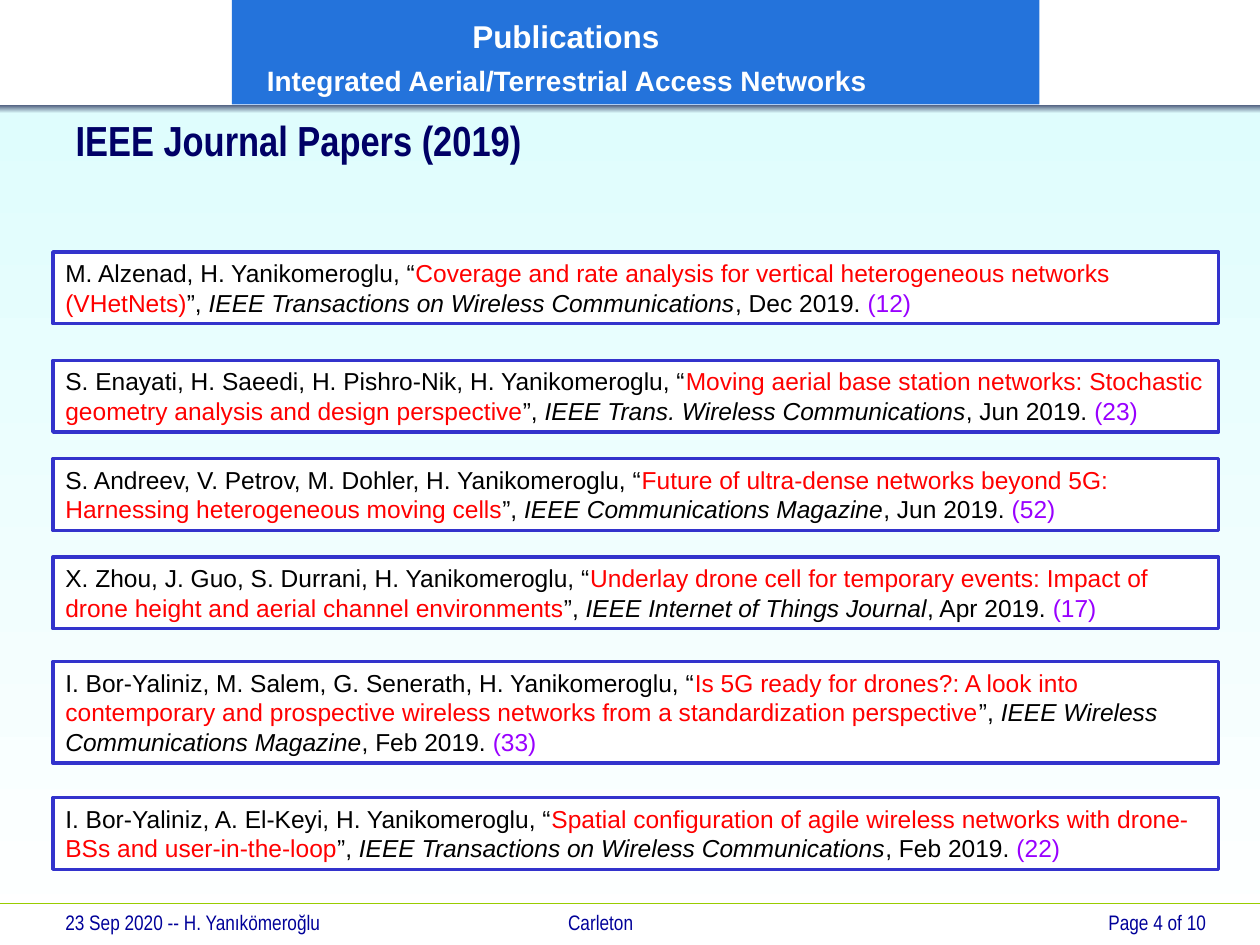
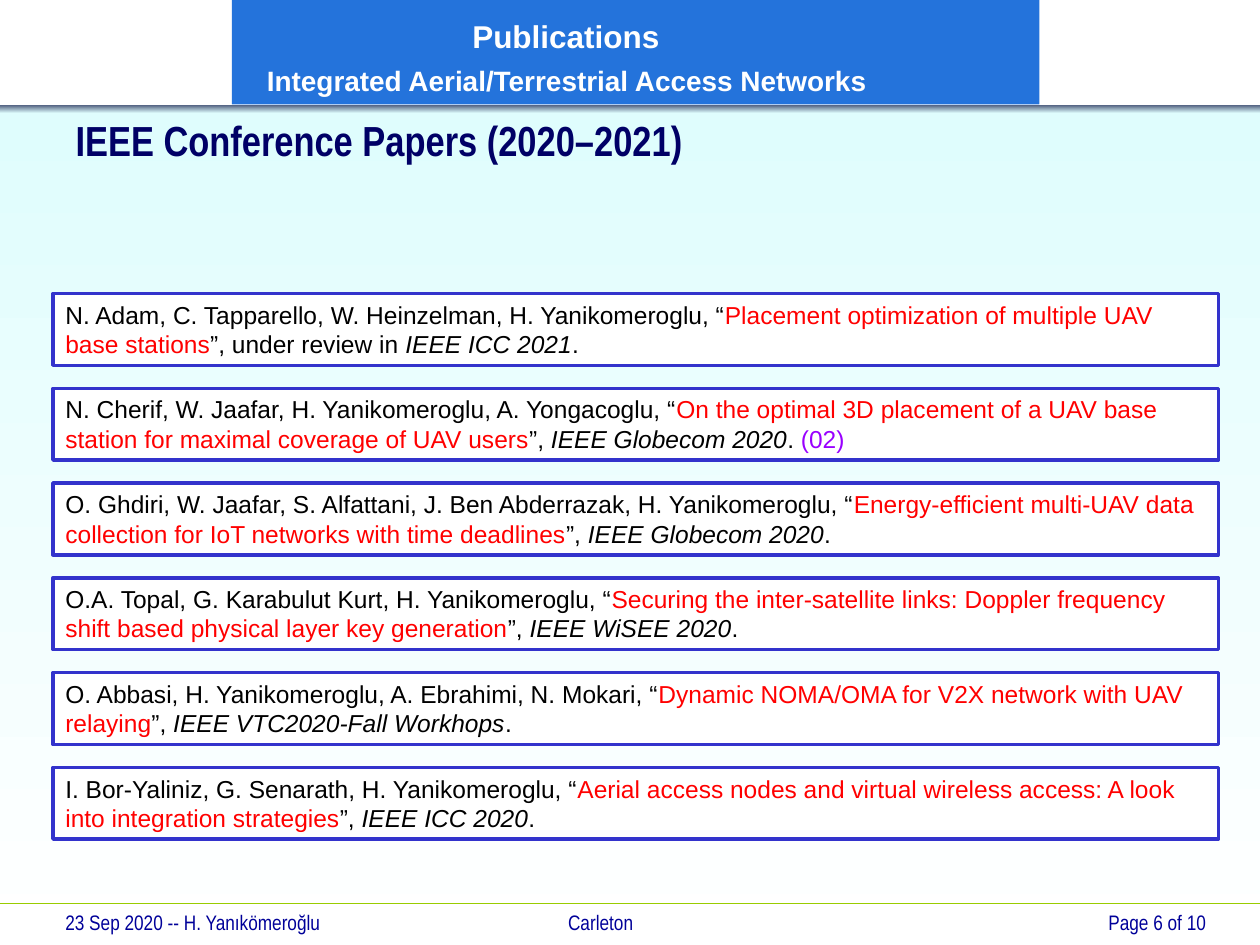
from lxml.etree import SubElement
from pptx import Presentation
from pptx.dml.color import RGBColor
from pptx.enum.shapes import MSO_CONNECTOR as Link, MSO_SHAPE as Shape
from pptx.enum.text import MSO_ANCHOR as Anchor, MSO_AUTO_SIZE as Fit, PP_ALIGN as Align
from pptx.oxml.ns import qn
from pptx.util import Inches, Pt

BLACK = RGBColor(0x00, 0x00, 0x00)
WHITE = RGBColor(0xFF, 0xFF, 0xFF)
RED = RGBColor(0xFF, 0x00, 0x00)
PURPLE = RGBColor(0x99, 0x00, 0xFF)
NAVY = RGBColor(0x00, 0x00, 0x66)
INK = RGBColor(0x00, 0x00, 0x99)
EDGE = RGBColor(0x33, 0x33, 0xCC)
BAND = RGBColor(0x24, 0x73, 0xDB)
SLATE = RGBColor(0x47, 0x55, 0x77)
PALE = RGBColor(0xDF, 0xFD, 0xFD)
LIME = RGBColor(0x99, 0xCC, 0x00)
NARROW = "Arial Narrow"

HEAD = [("Publications", 18, 1.81), ("Integrated Aerial/Terrestrial Access Networks", 16, 0.18)]
FOOT = "23 Sep 2020 -- H. Yanıkömeroğlu\tCarleton"

DECK = [
    dict(
        title="IEEE Journal Papers (2019)", width=6.92, page="Page 4 of 10",
        tops=[2, 2.86, 3.64, 4.42, 5.25, 6.33], lines=[2, 2, 2, 2, 3, 2],
        papers=[
            ("M. Alzenad, H. Yanikomeroglu",
             "Coverage and rate analysis for vertical heterogeneous networks (VHetNets)",
             "", "IEEE Transactions on Wireless Communications", ", Dec 2019. ", "(12)"),
            ("S. Enayati, H. Saeedi, H. Pishro-Nik, H. Yanikomeroglu",
             "Moving aerial base station networks: Stochastic geometry analysis and design perspective",
             "", "IEEE Trans. Wireless Communications", ", Jun 2019. ", "(23)"),
            ("S. Andreev, V. Petrov, M. Dohler, H. Yanikomeroglu",
             "Future of ultra-dense networks beyond 5G: Harnessing heterogeneous moving cells",
             "", "IEEE Communications Magazine", ", Jun 2019. ", "(52)"),
            ("X. Zhou, J. Guo, S. Durrani, H. Yanikomeroglu",
             "Underlay drone cell for temporary events: Impact of drone height and aerial channel environments",
             "", "IEEE Internet of Things Journal", ", Apr 2019. ", "(17)"),
            ("I. Bor-Yaliniz, M. Salem, G. Senerath, H. Yanikomeroglu",
             "Is 5G ready for drones?: A look into contemporary and prospective wireless networks "
             "from a standardization perspective",
             "", "IEEE Wireless Communications Magazine", ", Feb 2019. ", "(33)"),
            ("I. Bor-Yaliniz, A. El-Keyi, H. Yanikomeroglu",
             "Spatial configuration of agile wireless networks with drone-BSs and user-in-the-loop",
             "", "IEEE Transactions on Wireless Communications", ", Feb 2019. ", "(22)"),
        ]),
    dict(
        title="IEEE Conference Papers (2020–2021)", width=8.58, page="Page 6 of 10",
        tops=[2.33 + 3.76 * i / 5 for i in range(6)], lines=[2] * 6,
        papers=[
            ("N. Adam, C. Tapparello, W. Heinzelman, H. Yanikomeroglu",
             "Placement optimization of multiple UAV base stations",
             "under review in ", "IEEE ICC 2021", ".", ""),
            ("N. Cherif, W. Jaafar, H. Yanikomeroglu, A. Yongacoglu",
             "On the optimal 3D placement of a UAV base station for maximal coverage of UAV users",
             "", "IEEE Globecom 2020", ". ", "(02)"),
            ("O. Ghdiri, W. Jaafar, S. Alfattani, J. Ben Abderrazak, H. Yanikomeroglu",
             "Energy-efficient multi-UAV data collection for IoT networks with time deadlines",
             "", "IEEE Globecom 2020", ".", ""),
            ("O.A. Topal, G. Karabulut Kurt, H. Yanikomeroglu",
             "Securing the inter-satellite links: Doppler frequency shift based physical layer key generation",
             "", "IEEE WiSEE 2020", ".", ""),
            ("O. Abbasi, H. Yanikomeroglu, A. Ebrahimi, N. Mokari",
             "Dynamic NOMA/OMA for V2X network with UAV relaying",
             "", "IEEE VTC2020-Fall Workhops", ".", ""),
            ("I. Bor-Yaliniz, G. Senarath, H. Yanikomeroglu",
             "Aerial access nodes and virtual wireless access: A look into integration strategies",
             "", "IEEE ICC 2020", ".", ""),
        ]),
]


def put(para, text, size=14, color=BLACK, font="Arial", bold=False, italic=False, align=Align.LEFT):
    para.alignment = align
    run = para.add_run()
    run.text = text
    face = run.font
    face.size, face.name, face.bold, face.italic = Pt(size), font, bold, italic
    face.color.rgb = color


def box(slide, place, fill, line=None):
    rect = slide.shapes.add_shape(Shape.RECTANGLE, *map(Inches, place))
    rect.shadow.inherit = False
    if isinstance(fill, RGBColor):
        rect.fill.solid()
        rect.fill.fore_color.rgb = fill
    else:
        rect.fill.gradient()
        rect.fill.gradient_angle = 270
        for i, stop in enumerate(rect.fill.gradient_stops):
            stop.position, stop.color.rgb = i, fill[i]
    if line:
        rect.line.color.rgb, rect.line.width = line, Pt(2)
    else:
        rect.line.fill.background()
    return rect


def label(slide, place, text, tab=None, **form):
    frame = slide.shapes.add_textbox(*map(Inches, place)).text_frame
    frame.word_wrap = True
    para = frame.paragraphs[0]
    if tab:
        tabs = SubElement(para._p.get_or_add_pPr(), qn("a:tabLst"))
        SubElement(tabs, qn("a:tab"), pos=str(Inches(tab)), algn="l")
    put(para, text, size=12, color=INK, font=NARROW, **form)


def dress(slide, page):
    box(slide, (0, 0.86, 10, 6.65), (PALE, WHITE))
    rule = slide.shapes.add_connector(Link.STRAIGHT, 0, Inches(7.17), Inches(10), Inches(7.17))
    rule.line.color.rgb, rule.line.width = LIME, Pt(0.75)
    SubElement(rule._element.spPr, qn("a:effectLst"))
    label(slide, (0.42, 7.17, 6.25, 0.33), FOOT, tab=3.99)
    label(slide, (7.5, 7.17, 2.17, 0.25), page, align=Align.RIGHT)
    box(slide, (0, 0.83, 10, 0.07), (SLATE, PALE))
    frame = box(slide, (1.84, 0, 6.41, 0.83), BAND).text_frame
    frame.vertical_anchor, frame.margin_top = Anchor.MIDDLE, Inches(0.1)
    for i, (text, size, inset) in enumerate(HEAD):
        para = frame.add_paragraph() if i else frame.paragraphs[0]
        para._p.get_or_add_pPr().set("marL", str(Inches(inset)))
        para.line_spacing = 1.1
        if i:
            para.space_before = Pt(3.2)
        put(para, text, size=size, color=WHITE, bold=True)


def entitle(slide, text, width):
    title = slide.shapes.title
    title.left, title.top, title.width, title.height = map(Inches, (0.5, 0.9, width, 0.42))
    frame = title.text_frame
    frame.auto_size, frame.vertical_anchor = Fit.NONE, Anchor.MIDDLE
    put(frame.paragraphs[0], text, size=24, color=NAVY, font=NARROW, bold=True)
    title.element.getparent().append(title.element)


def cite(slide, top, lines, paper):
    names, topic, state, venue, date, count = paper
    frame = box(slide, (0.42, top, 9.25, 0.1 + 0.235 * lines), WHITE, EDGE).text_frame
    frame.word_wrap, frame.vertical_anchor = True, Anchor.TOP
    para = frame.paragraphs[0]
    put(para, names + ", “")
    put(para, topic, color=RED)
    put(para, "”, " + state)
    put(para, venue, italic=True)
    put(para, date)
    if count:
        put(para, count, color=PURPLE)


def main():
    deck = Presentation()
    deck.slide_width, deck.slide_height = Inches(10), Inches(7.5)
    for part in DECK:
        slide = deck.slides.add_slide(deck.slide_layouts[5])
        dress(slide, part["page"])
        entitle(slide, part["title"], part["width"])
        for row in zip(part["tops"], part["lines"], part["papers"]):
            cite(slide, *row)
    deck.save("out.pptx")


if __name__ == "__main__":
    main()
